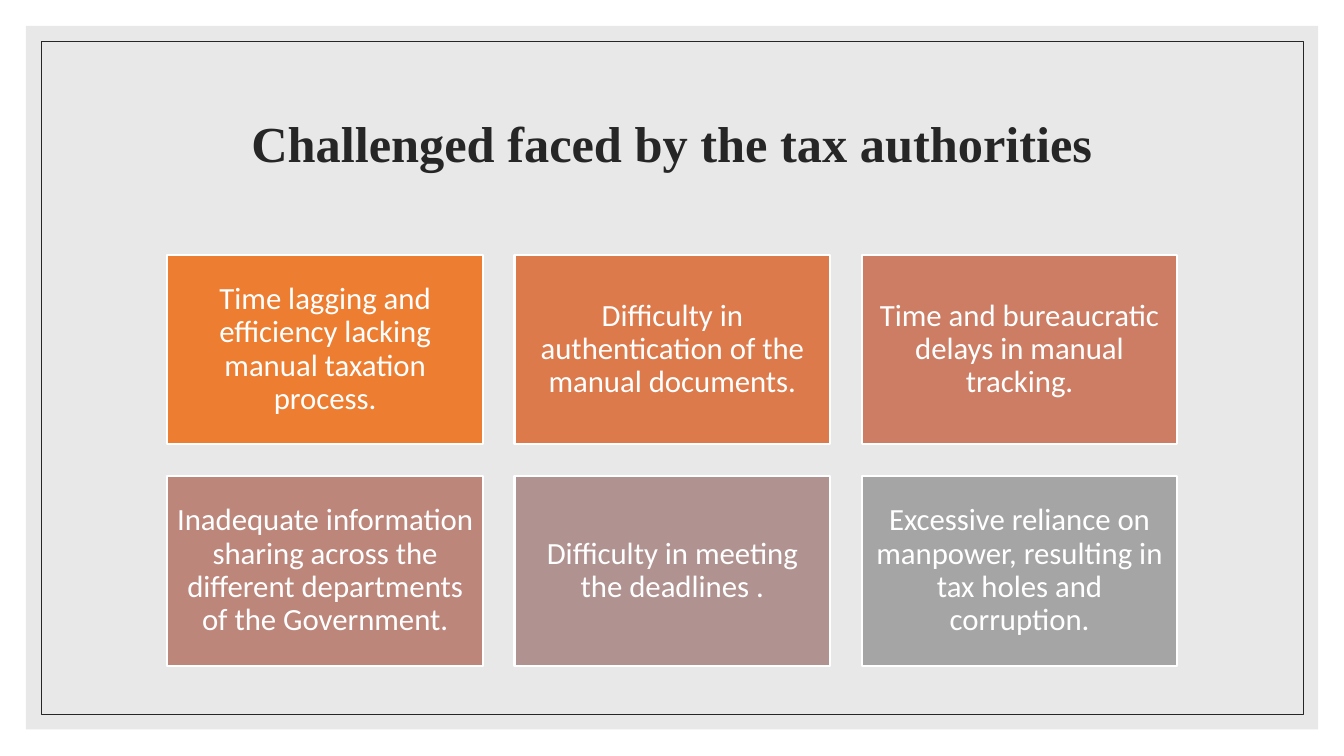
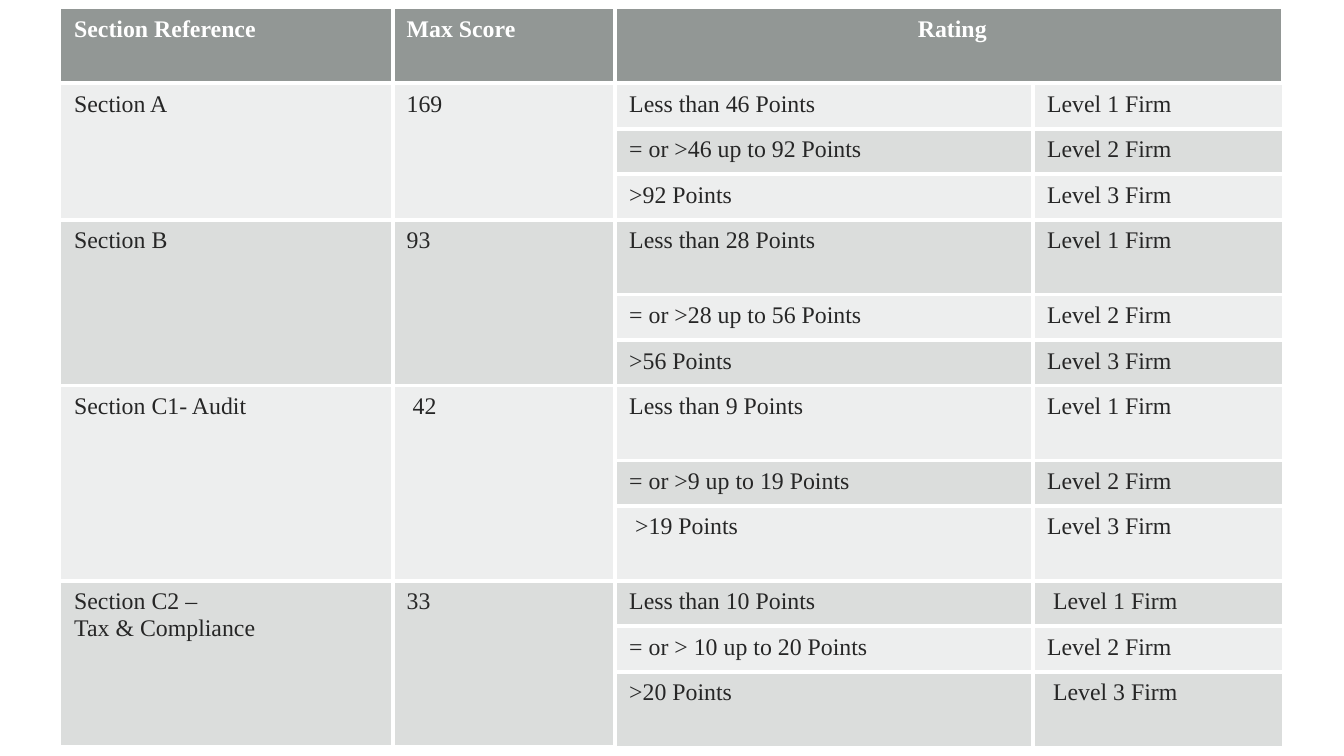
from pptx import Presentation
from pptx.dml.color import RGBColor
from pptx.enum.shapes import MSO_SHAPE
from pptx.enum.text import MSO_ANCHOR, PP_ALIGN
from pptx.oxml.ns import qn
from pptx.util import Pt
from lxml import etree

RECTANGLE = MSO_SHAPE.RECTANGLE
MIDDLE = MSO_ANCHOR.MIDDLE
CENTER = PP_ALIGN.CENTER
LEFT = PP_ALIGN.LEFT

PX = 6350
INK = "262626"
WHITE = "FFFFFF"
PANEL = "E8E8E8"
HEADER = "929795"
BANDS = ["DBDDDC", "EDEEEE"]
SERIF = "Times New Roman"

TITLE_STYLE = {"name": SERIF, "size": Pt(36), "bold": True}
TILE_STYLE = {"name": "Calibri", "size": Pt(22), "bold": False}
HEAD_STYLE = {"name": SERIF, "size": Pt(17), "bold": True}
CELL_STYLE = {**HEAD_STYLE, "bold": False}


def color(value):
    return RGBColor.from_string(value)


def write(frame, text, style, ink, align, spacing=1.0):
    frame.word_wrap = True
    frame.text = text
    for para in frame.paragraphs:
        para.alignment = align
        para.line_spacing = spacing
        for span in para.runs:
            for key, value in style.items():
                setattr(span.font, key, value)
            span.font.color.rgb = color(ink)


deck = Presentation()
deck.slide_width = 1920 * PX
deck.slide_height = 1080 * PX
blank = deck.slide_layouts[6]

page = deck.slides.add_slide(blank)

TILE_LEFT, TILE_TOP, TILE_WIDTH, TILE_HEIGHT, GAP = 239, 364, 451, 271, 45
tiles = [
    ("Time lagging and efficiency lacking manual taxation process.", "ED7D31"),
    ("Difficulty in authentication of the manual documents.", "DC7A4B"),
    ("Time and bureaucratic delays in manual tracking.", "CC7D64"),
    ("Inadequate information sharing across the different departments of the Government.", "BD867B"),
    ("Difficulty in meeting the deadlines .", "B09391"),
    ("Excessive reliance on manpower, resulting in tax holes and corruption.", "A5A5A5"),
]
boxes = [
    ("", (37, 37, 1846, 1005), PANEL, None, 0),
    ("", (59, 59, 1803, 962), None, INK, 0.5),
]
for index, (text, fill) in enumerate(tiles):
    row, column = divmod(index, 3)
    left = TILE_LEFT + column * (TILE_WIDTH + GAP)
    top = TILE_TOP + row * (TILE_HEIGHT + GAP)
    boxes.append((text, (left, top, TILE_WIDTH, TILE_HEIGHT), fill, WHITE, 1.5))

for text, place, fill, line, weight in boxes:
    box = page.shapes.add_shape(RECTANGLE, *[length * PX for length in place])
    box.shadow.inherit = False
    if fill:
        box.fill.solid()
        box.fill.fore_color.rgb = color(fill)
    else:
        box.fill.background()
    if line:
        box.line.color.rgb = color(line)
        box.line.width = Pt(weight)
    else:
        box.line.fill.background()
    if text:
        for side in ("left", "top", "right", "bottom"):
            setattr(box.text_frame, "margin_" + side, 13 * PX)
        box.text_frame.vertical_anchor = MIDDLE
        write(box.text_frame, text, TILE_STYLE, WHITE, CENTER, 0.9)

title = page.shapes.add_textbox(168 * PX, 101 * PX, 1584 * PX, 216 * PX)
title.text_frame.vertical_anchor = MIDDLE
write(title.text_frame, "Challenged faced by the tax authorities", TITLE_STYLE, INK, CENTER, 0.9)

page = deck.slides.add_slide(blank)

SHORT, TALL = 65, 107
widths = [475, 318, 597, 357]
heights = [TALL, SHORT, SHORT, SHORT, TALL, SHORT, SHORT, TALL, SHORT, TALL, SHORT, SHORT, TALL]
margins = {"margin_left": 20, "margin_top": 11, "margin_right": 11, "margin_bottom": 11}
ratings = [
    ["Section Reference", "Max Score", "Rating", ""],
    ["Section A", "169", "Less than 46 Points", "Level 1 Firm"],
    ["", "", "= or >46 up to 92 Points", "Level 2 Firm"],
    ["", "", ">92 Points", "Level 3 Firm"],
    ["Section B", "93", "Less than 28 Points", "Level 1 Firm"],
    ["", "", "= or >28 up to 56 Points", "Level 2 Firm"],
    ["", "", ">56 Points", "Level 3 Firm"],
    ["Section C1- Audit", " 42", "Less than 9 Points", "Level 1 Firm"],
    ["", "", "= or >9 up to 19 Points", "Level 2 Firm"],
    ["", "", " >19 Points", "Level 3 Firm"],
    ["Section C2 –\nTax & Compliance", "33", "Less than 10 Points", " Level 1 Firm"],
    ["", "", "= or > 10 up to 20 Points", "Level 2 Firm"],
    ["", "", ">20 Points", " Level 3 Firm"],
]
last_row, last_column = len(heights) - 1, len(widths) - 1
table = page.shapes.add_table(
    len(heights), len(widths), 86 * PX, 12 * PX, sum(widths) * PX, sum(heights) * PX
).table
table.horz_banding = False
for column, width in zip(table.columns, widths):
    column.width = width * PX
for row, height in zip(table.rows, heights):
    row.height = height * PX

table.cell(0, 2).merge(table.cell(0, 3))
for first in range(1, len(heights), 3):
    for column in range(2):
        table.cell(first, column).merge(table.cell(first + 2, column))

for row, texts in enumerate(ratings):
    for column, text in enumerate(texts):
        cell = table.cell(row, column)
        for key, value in margins.items():
            setattr(cell, key, value * PX)
        inner_sides = {
            "a:lnL": column > 0,
            "a:lnR": column < last_column,
            "a:lnT": row > 0,
            "a:lnB": row < last_row,
        }
        properties = cell._tc.get_or_add_tcPr()
        for tag, inner in inner_sides.items():
            if inner:
                border = etree.SubElement(properties, qn(tag), w=str(Pt(3)))
                solid = etree.SubElement(border, qn("a:solidFill"))
                etree.SubElement(solid, qn("a:srgbClr"), val=WHITE)
        cell.fill.solid()
        cell.fill.fore_color.rgb = color(BANDS[row % 2] if row else HEADER)
        if text:
            style, ink = (CELL_STYLE, INK) if row else (HEAD_STYLE, WHITE)
            write(cell.text_frame, text, style, ink, CENTER if text == "Rating" else LEFT)

deck.save("out.pptx")
